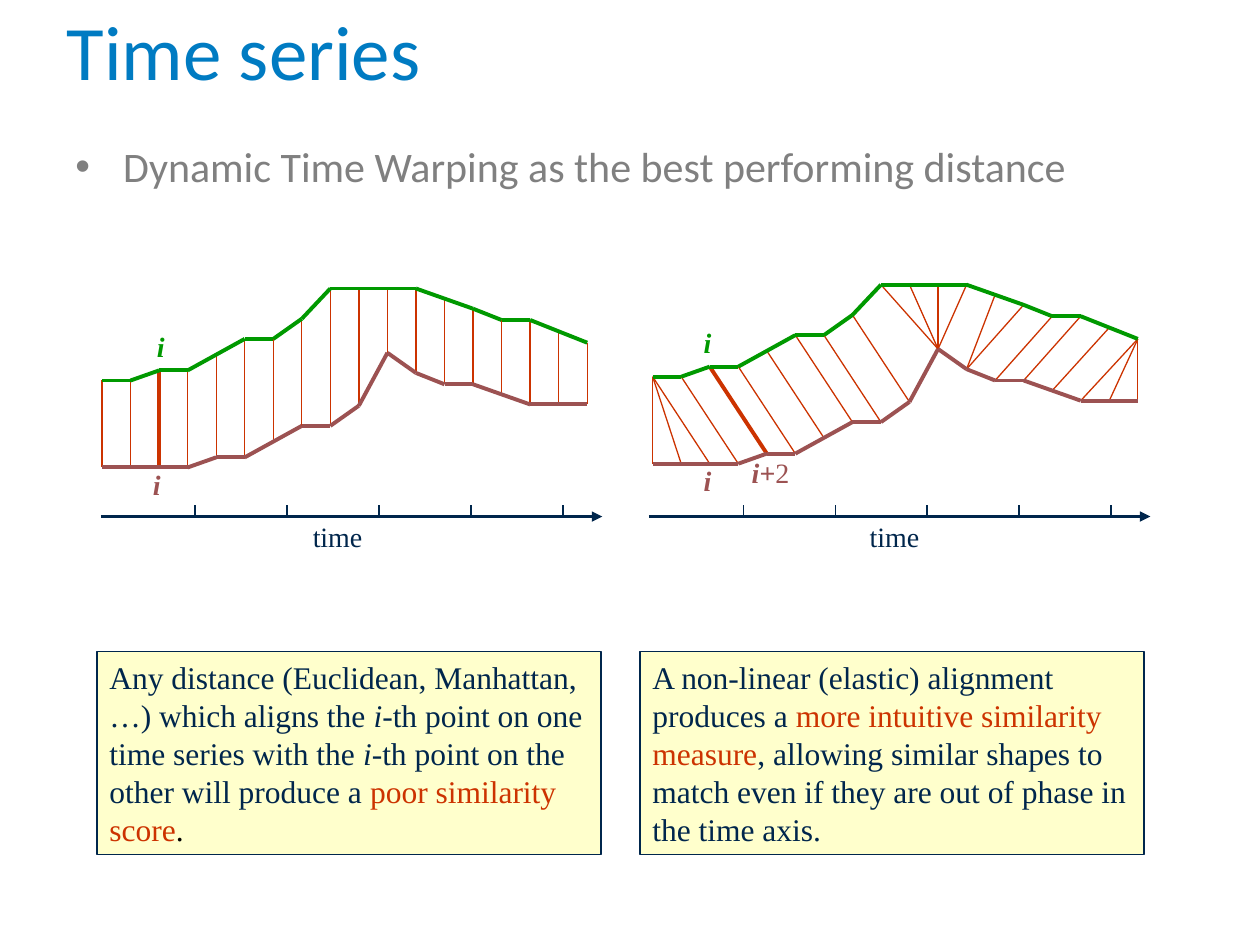
from itertools import pairwise

from lxml import etree
from pptx import Presentation
from pptx.dml.color import RGBColor
from pptx.enum.shapes import MSO_CONNECTOR, MSO_SHAPE
from pptx.enum.text import MSO_ANCHOR, MSO_AUTO_SIZE, PP_ALIGN
from pptx.oxml.ns import qn
from pptx.util import Inches, Pt

STRAIGHT, RECTANGLE = MSO_CONNECTOR.STRAIGHT, MSO_SHAPE.RECTANGLE
MIDDLE, BOTTOM, TOP = MSO_ANCHOR.MIDDLE, MSO_ANCHOR.BOTTOM, MSO_ANCHOR.TOP
LEFT, CENTER = PP_ALIGN.LEFT, PP_ALIGN.CENTER
NO_FIT, GROW = MSO_AUTO_SIZE.NONE, MSO_AUTO_SIZE.SHAPE_TO_FIT_TEXT

SANS, SERIF = "Calibri", "Times New Roman"
BLUE, GREY, NAVY, BLACK = "007BC2", "808080", "00264C", "000000"
GREEN, BROWN, RED = "009900", "9C5252", "CC3300"
WHITE, CREAM = "FFFFFF", "FFFFCC"

TITLE = "Time series"
BULLET = "Dynamic Time Warping as the best performing distance"
ITALIC = {"italic": True}
BOLD_ITALIC = {"bold": True, "italic": True}
LABELS = [
    (5.54, 2.47, 0.15, GREEN, [("i", BOLD_ITALIC)]),
    (5.97, 3.5, 0.29, BROWN, [("i+", BOLD_ITALIC), ("2", {})]),
    (1.2, 2.5, 0.15, GREEN, [("i", BOLD_ITALIC)]),
    (1.17, 3.59, 0.15, BROWN, [("i", BOLD_ITALIC)]),
    (5.54, 3.56, 0.15, BROWN, [("i", BOLD_ITALIC)]),
    (6.95, 4.01, 0.3, NAVY, [("time", {})]),
    (2.53, 4.01, 0.3, NAVY, [("time", {})]),
]
NOTES = [
    (0.77, [
        ("Any distance (Euclidean, Manhattan, …) which aligns the ", {}),
        ("i", ITALIC),
        ("-th point on one time series with the ", {}),
        ("i", ITALIC),
        ("-th point on the other will produce a ", {}),
        ("poor similarity score", {"color": RED}),
        (".", {"color": BLACK}),
    ]),
    (5.08, [
        ("A non-linear (elastic) alignment produces a ", {}),
        ("more intuitive similarity measure", {"color": RED}),
        (", allowing similar shapes to match even if they are out of phase in the time axis.", {}),
    ]),
]
UPPER = {0: 3.02, 1: 3.02, 2: 2.94, 3: 2.94, 5: 2.69, 6: 2.69, 7: 2.53,
         8: 2.29, 11: 2.29, 13: 2.45, 14: 2.54, 15: 2.54, 17: 2.72}
LOWER = {0: 3.71, 3: 3.71, 4: 3.63, 5: 3.63, 7: 3.38, 8: 3.38, 9: 3.22,
         10: 2.8, 11: 2.96, 12: 3.05, 13: 3.05, 15: 3.21, 17: 3.21}
ALIGNED = [(index, index) for index in range(18)]
WARPED = [(0, 0), (0, 1), (0, 2), (1, 3), (2, 4), (3, 5), (4, 6), (5, 7), (6, 8),
          (7, 9), (8, 10), (9, 10), (10, 10), (11, 10), (12, 11), (13, 11),
          (14, 12), (15, 13), (16, 14), (17, 15), (17, 16), (17, 17)]
CHARTS = [
    {"left": 0.81, "shift": 0, "axis": 0.8, "pairs": ALIGNED},
    {"left": 5.18, "shift": -0.03, "axis": 5.15, "pairs": WARPED},
]
STEP = 0.2265
MARKED_POINT = 2
AXIS_TOP, AXIS_LENGTH = 4.1, 3.98
TICK_START, TICK_STEP, TICK_COUNT = 0.75, 0.73, 5


def rgb(value):
    """Turn a hex string into a colour."""
    return RGBColor.from_string(value)


def place(shape, left, top, width, height):
    """Set the position and size of a shape in inches."""
    shape.left, shape.top = Inches(left), Inches(top)
    shape.width, shape.height = Inches(width), Inches(height)


def write(shape, runs, size, color, font=SERIF, align=LEFT, anchor=MIDDLE, wrap=True, fit=NO_FIT):
    """Fill a shape with one paragraph of formatted runs and return the paragraph."""
    frame = shape.text_frame
    frame.word_wrap, frame.auto_size, frame.vertical_anchor = wrap, fit, anchor
    paragraph = frame.paragraphs[0]
    paragraph.alignment = align
    for text, style in runs:
        run = paragraph.add_run()
        run.text = text
        run.font.name, run.font.size = font, Pt(size)
        run.font.bold = style.get("bold", False)
        run.font.italic = style.get("italic", False)
        run.font.color.rgb = rgb(style.get("color", color))
    return paragraph


def add_box(slide, left, top, width, height, fill, line=None):
    """Add a flat rectangle with an optional outline."""
    shape = slide.shapes.add_shape(RECTANGLE, 0, 0, 0, 0)
    place(shape, left, top, width, height)
    shape.shadow.inherit = False
    shape.fill.solid()
    shape.fill.fore_color.rgb = rgb(fill)
    if line:
        shape.line.color.rgb = rgb(line)
        shape.line.width = Pt(0.75)
    else:
        shape.line.fill.background()
    return shape


def add_line(shapes, start, end, color, width, arrow=False):
    """Add a straight line between two points, with an optional arrowhead."""
    connector = shapes.add_connector(STRAIGHT, *(Inches(value) for value in (*start, *end)))
    connector.line.color.rgb = rgb(color)
    connector.line.width = Pt(width)
    if arrow:
        etree.SubElement(connector.line._get_or_add_ln(), qn("a:tailEnd"), type="triangle")
    etree.SubElement(connector._element.spPr, qn("a:effectLst"))


def height_at(series, index):
    """Interpolate the height of a series at an index."""
    for (first, start), (last, end) in pairwise(series.items()):
        if first <= index <= last:
            return start + (end - start) * (index - first) / (last - first)


def add_chart_lines(slide, left, shift, axis, pairs):
    """Draw a time axis, the matches between two series and the series."""
    def point(series, index):
        """Locate a series point on the slide."""
        return left + STEP * index, height_at(series, index) + shift

    axis_group = slide.shapes.add_group_shape().shapes
    add_line(axis_group, (axis, AXIS_TOP), (axis + AXIS_LENGTH, AXIS_TOP), NAVY, 1.5, arrow=True)
    for number in range(TICK_COUNT):
        tick = axis + TICK_START + TICK_STEP * number
        add_line(axis_group, (tick, AXIS_TOP - 0.09), (tick, AXIS_TOP), NAVY, 1)
    for upper, lower in pairs:
        width = 2.25 if upper == MARKED_POINT else 0.75
        add_line(slide.shapes, point(UPPER, upper), point(LOWER, lower), RED, width)
    for series, color in ((UPPER, GREEN), (LOWER, BROWN)):
        series_group = slide.shapes.add_group_shape().shapes
        for first, last in pairwise(series):
            add_line(series_group, point(series, first), point(series, last), color, 2.25)


def main():
    """Build and save the slide."""
    presentation = Presentation()
    presentation.slide_width, presentation.slide_height = Inches(10), Inches(7.5)
    slide = presentation.slides.add_slide(presentation.slide_layouts[5])

    title = slide.shapes.title
    place(title, 0.43, 0.01, 9.13, 0.8)
    write(title, [(TITLE, {})], 44, BLUE, font=SANS, anchor=BOTTOM).line_spacing = Pt(58)

    body = slide.shapes.add_textbox(0, 0, 0, 0)
    place(body, 0.5, 1.07, 9, 6.14)
    paragraph = write(body, [(BULLET, {})], 24, GREY, font=SANS, anchor=TOP)
    properties = paragraph._p.get_or_add_pPr()
    properties.set("marL", str(Inches(0.38)))
    properties.set("indent", str(Inches(-0.38)))
    etree.SubElement(properties, qn("a:buFont"), typeface="Arial")
    etree.SubElement(properties, qn("a:buChar"), char="•")

    for left, top, width, color, runs in LABELS:
        label = add_box(slide, left, top, width, 0.5, WHITE)
        write(label, runs, 16, color, align=CENTER, wrap=False)
    for left, runs in NOTES:
        note = add_box(slide, left, 5.17, 4, 1.61, CREAM, NAVY)
        write(note, runs, 18, NAVY, fit=GROW)
    for chart in CHARTS:
        add_chart_lines(slide, **chart)

    presentation.save("out.pptx")


if __name__ == "__main__":
    main()
